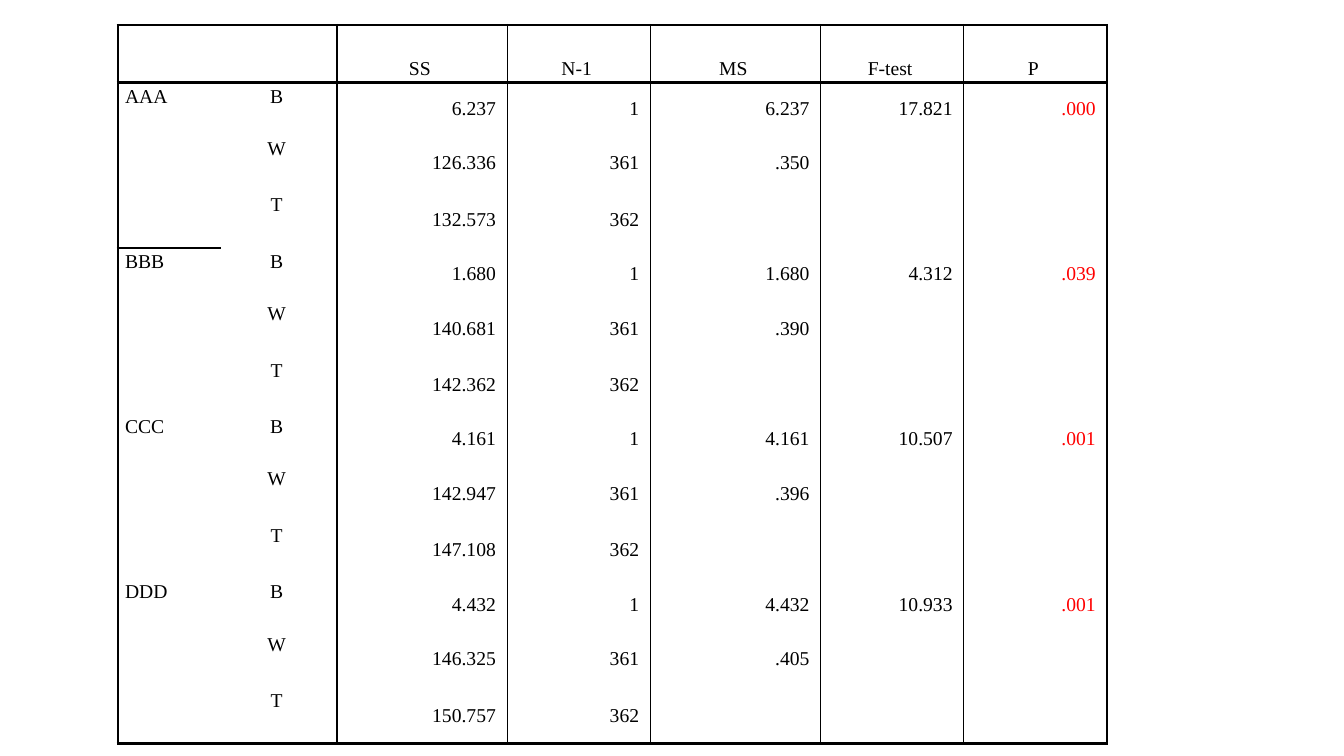
from lxml import etree
from pptx import Presentation
from pptx.dml.color import RGBColor
from pptx.enum import text
from pptx.oxml import ns
from pptx.util import Inches, Pt

BLACK = RGBColor(0, 0, 0)
RED = RGBColor(0xFF, 0, 0)
FONT = "Times New Roman"
NO_GRID_STYLE = "{2D5ABB26-0587-4C30-8999-92F81FD0307C}"
THIN, THICK = 1, 2

HEADINGS = ["SS", "N-1", "MS", "F-test", "P"]
SOURCES = ["B", "W", "T"]
GROUPS = {
    "AAA": [["6.237", "1", "6.237", "17.821", ".000"],
            ["126.336", "361", ".350"],
            ["132.573", "362"]],
    "BBB": [["1.680", "1", "1.680", "4.312", ".039"],
            ["140.681", "361", ".390"],
            ["142.362", "362"]],
    "CCC": [["4.161", "1", "4.161", "10.507", ".001"],
            ["142.947", "361", ".396"],
            ["147.108", "362"]],
    "DDD": [["4.432", "1", "4.432", "10.933", ".001"],
            ["146.325", "361", ".405"],
            ["150.757", "362"]],
}
COL_WIDTHS = [1.02, 1.15, 1.69, 1.42, 1.69, 1.42, 1.42]
ROW_HEIGHTS = [0.57] + [0.52, 0.56, 0.56] * len(GROUPS)
LAST_COL = len(COL_WIDTHS) - 1
LAST_ROW = len(ROW_HEIGHTS) - 1


def set_borders(cell, **widths):
    tc_pr = cell._tc.get_or_add_tcPr()
    for side in "LRTB":
        width = widths.get(side, 0)
        ln = etree.SubElement(tc_pr, ns.qn(f"a:ln{side}"), w=str(Pt(width)))
        if width:
            fill = etree.SubElement(ln, ns.qn("a:solidFill"))
            etree.SubElement(fill, ns.qn("a:srgbClr"), val=str(BLACK))
        else:
            etree.SubElement(ln, ns.qn("a:noFill"))


def grid_borders(row, col):
    borders = {}
    if col != 1:
        borders["L"] = THICK if col in (0, 2) else THIN
    if col != 0:
        borders["R"] = THICK if col in (1, LAST_COL) else THIN
    if row in (0, 1) or (row == 4 and col == 0):
        borders["T"] = THICK
    if row in (0, LAST_ROW) or (row <= 3 and col == 0):
        borders["B"] = THICK
    if col == 0 and row >= LAST_ROW - 2:
        borders["B"] = THICK
    if row == 0 and col == 0:
        borders["R"] = THICK
    return borders


def write_cell(cell, value, align, anchor, color=BLACK):
    cell.vertical_anchor = anchor
    p = cell.text_frame.paragraphs[0]
    p.text = value
    p.alignment = align
    p_pr = p._p.get_or_add_pPr()
    p_pr.set("marL", "0")
    p_pr.set("marR", str(Inches(0.04)))
    p_pr.set("indent", str(Inches(-0.04)))
    for r in p.runs:
        r.font.name = FONT
        r.font.size = Pt(14)
        r.font.color.rgb = color


def fill_table(table):
    align, anchor = text.PP_ALIGN, text.MSO_ANCHOR
    for col, heading in enumerate(HEADINGS, 2):
        write_cell(table.cell(0, col), heading, align.CENTER, anchor.BOTTOM)
    for g, (name, rows) in enumerate(GROUPS.items()):
        top = 1 + g * len(SOURCES)
        write_cell(table.cell(top, 0), name, align.LEFT, anchor.TOP)
        for row, (source, values) in enumerate(zip(SOURCES, rows), top):
            write_cell(table.cell(row, 1), source, align.CENTER, anchor.TOP)
            for col, value in enumerate(values, 2):
                color = RED if col == LAST_COL else BLACK
                write_cell(table.cell(row, col), value, align.RIGHT,
                           anchor.MIDDLE, color)
        table.cell(top, 0).merge(table.cell(top + len(SOURCES) - 1, 0))
    table.cell(0, 0).merge(table.cell(0, 1))


def add_anova_table(s, left, top):
    frame = s.shapes.add_table(len(ROW_HEIGHTS), len(COL_WIDTHS),
                               Inches(left), Inches(top),
                               Inches(sum(COL_WIDTHS)),
                               Inches(sum(ROW_HEIGHTS)))
    table = frame.table
    table.first_row = table.horz_banding = False
    table._tbl.tblPr.find(ns.qn("a:tableStyleId")).text = NO_GRID_STYLE
    for column, width in zip(table.columns, COL_WIDTHS):
        column.width = Inches(width)
    for row, height in enumerate(ROW_HEIGHTS):
        table.rows[row].height = Inches(height)
        for col in range(len(COL_WIDTHS)):
            cell = table.cell(row, col)
            cell.margin_left = cell.margin_right = Inches(0.07)
            cell.margin_top = cell.margin_bottom = Inches(0.03)
            set_borders(cell, **grid_borders(row, col))
            cell.fill.background()
    fill_table(table)


def main():
    prs = Presentation()
    prs.slide_width = Inches(13.33)
    prs.slide_height = Inches(7.5)
    s = prs.slides.add_slide(prs.slide_layouts[6])
    add_anova_table(s, 1.17, 0.25)
    prs.save("out.pptx")


if __name__ == "__main__":
    main()
